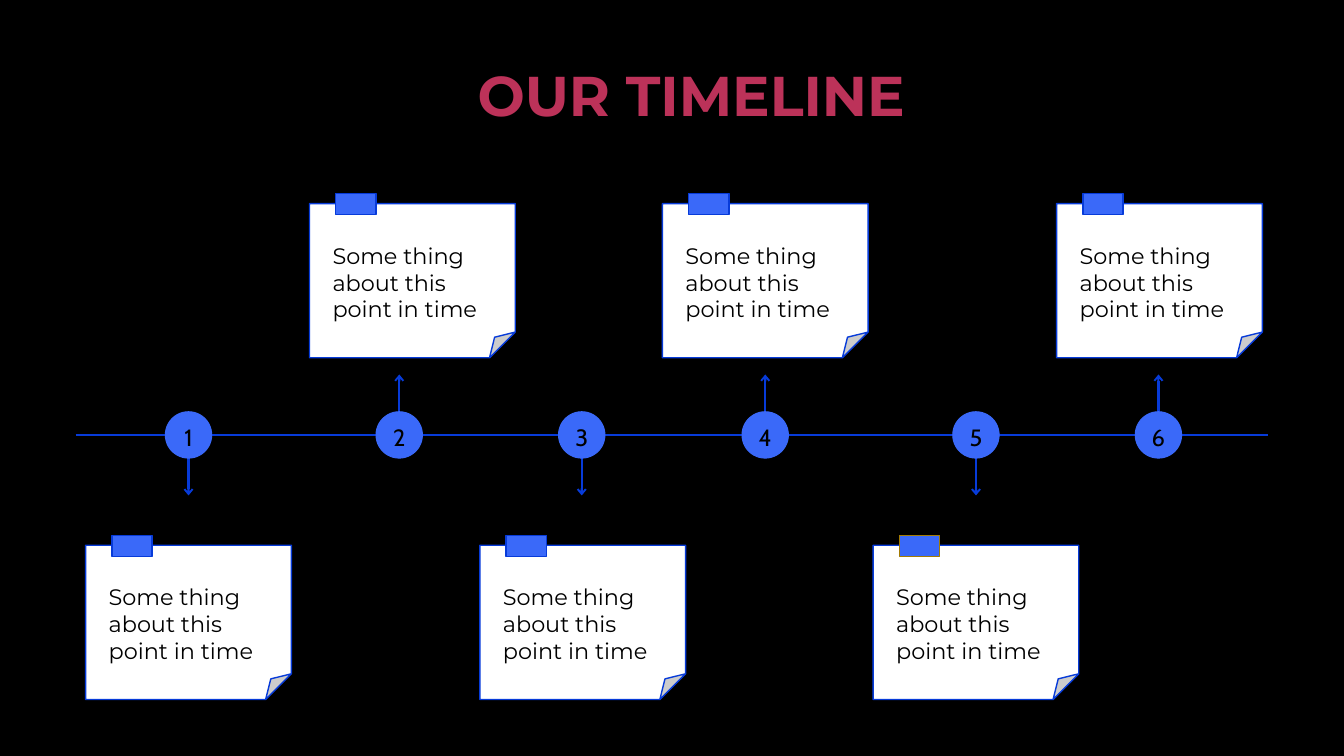
import pptx
import pptx.dml.color
import pptx.enum.shapes
import pptx.enum.text
import pptx.oxml
import pptx.oxml.ns
import pptx.util
from pptx.util import Inches

RGBColor = pptx.dml.color.RGBColor
Shape = pptx.enum.shapes.MSO_SHAPE
Align = pptx.enum.text.PP_ALIGN
Anchor = pptx.enum.text.MSO_ANCHOR

BLACK = RGBColor(0x00, 0x00, 0x00)
WHITE = RGBColor(0xFF, 0xFF, 0xFF)
CRIMSON = RGBColor(0xBC, 0x32, 0x59)
BLUE = RGBColor(0x3A, 0x69, 0xF9)
DEEP_BLUE = RGBColor(0x07, 0x3B, 0xD9)
GOLD = RGBColor(0xA3, 0x7B, 0x03)

AXIS_Y = 4.315
RADIUS = 0.23
NOTE_TEXT = "Some thing about this point in time"
# Marker centre, note left edge, outline colour of the tape
POINTS = [
    (1.87, 0.85, DEEP_BLUE),
    (3.96, 3.07, DEEP_BLUE),
    (5.77, 4.76, DEEP_BLUE),
    (7.59, 6.57, DEEP_BLUE),
    (9.68, 8.66, GOLD),
    (11.49, 10.48, DEEP_BLUE),
]


class TimelineSlide:
    """Draws timeline elements on one slide in a shared style."""

    def __init__(self, deck):
        self.slide = deck.slides.add_slide(deck.slide_layouts[5])
        self.slide.background.fill.solid()
        self.slide.background.fill.fore_color.rgb = BLACK

    def style_text(self, para, font, size, color, bold=False):
        for span in para.runs:
            span.font.name = font
            span.font.size = pptx.util.Pt(size)
            span.font.color.rgb = color
            span.font.bold = bold

    def title(self, text):
        box = self.slide.shapes.title
        box.left, box.top = Inches(0.92), Inches(0.43)
        box.width, box.height = Inches(11.87), Inches(1.1)
        box.text_frame.text = text
        box.text_frame.vertical_anchor = Anchor.MIDDLE
        para = box.text_frame.paragraphs[0]
        para.alignment = Align.CENTER
        para.line_spacing = 0.9
        self.style_text(para, "Montserrat", 40, CRIMSON, bold=True)

    def shape(self, kind, left, top, width, height, fill, outline, weight=1):
        shape = self.slide.shapes.add_shape(
            kind, Inches(left), Inches(top), Inches(width), Inches(height))
        shape.shadow.inherit = False
        shape.fill.solid()
        shape.fill.fore_color.rgb = fill
        shape.line.color.rgb = outline
        shape.line.width = pptx.util.Pt(weight)
        return shape

    def line(self, start, end, arrow=False):
        line = self.slide.shapes.add_connector(
            pptx.enum.shapes.MSO_CONNECTOR.STRAIGHT,
            *(Inches(value) for value in (*start, *end)))
        line.line.color.rgb = DEEP_BLUE
        line.line.width = pptx.util.Pt(1.5)
        properties = line.line._get_or_add_ln()
        if arrow:
            head = pptx.oxml.parse_xml(
                f'<a:tailEnd {pptx.oxml.ns.nsdecls("a")} type="arrow" w="med" len="sm"/>')
            properties.append(head)
        properties.addnext(pptx.oxml.parse_xml(
            f'<a:effectLst {pptx.oxml.ns.nsdecls("a")}/>'))

    def marker(self, number, center, direction):
        """Numbered circle with an arrow; direction is -1 for up, 1 for down."""
        self.line((center, AXIS_Y + direction * RADIUS),
                  (center, AXIS_Y + direction * 0.6), arrow=True)
        circle = self.shape(Shape.OVAL, center - RADIUS, AXIS_Y - RADIUS,
                            2 * RADIUS, 2 * RADIUS, BLUE, BLUE, 0.75)
        frame = circle.text_frame
        frame.margin_left = frame.margin_right = 0
        frame.margin_top = frame.margin_bottom = 0
        frame.word_wrap = False
        frame.vertical_anchor = Anchor.MIDDLE
        frame.text = str(number)
        para = frame.paragraphs[0]
        para.alignment = Align.CENTER
        para.line_spacing = pptx.util.Pt(23.5)
        self.style_text(para, "Cabin", 16.8, BLACK)

    def note(self, left, top, tape_outline):
        self.shape(Shape.FOLDED_CORNER, left, top, 2.04, 1.53, WHITE, DEEP_BLUE)
        box = self.slide.shapes.add_textbox(
            Inches(left + 0.13), Inches(top + 0.33), Inches(1.78), Inches(0.91))
        box.text_frame.word_wrap = True
        box.text_frame.text = NOTE_TEXT
        self.style_text(box.text_frame.paragraphs[0], "Montserrat", 16, BLACK)
        self.shape(Shape.RECTANGLE, left + 0.26, top - 0.1, 0.4, 0.21,
                   BLUE, tape_outline)


def main():
    deck = pptx.Presentation()
    deck.slide_width, deck.slide_height = Inches(13.33), Inches(7.5)
    timeline = TimelineSlide(deck)
    timeline.title("OUR TIMELINE")
    timeline.line((0.75, AXIS_Y), (12.58, AXIS_Y))
    for number, (center, note_left, tape_outline) in enumerate(POINTS, start=1):
        below = number % 2 == 1
        timeline.marker(number, center, 1 if below else -1)
        timeline.note(note_left, 5.41 if below else 2.02, tape_outline)
    deck.save("out.pptx")


if __name__ == "__main__":
    main()
